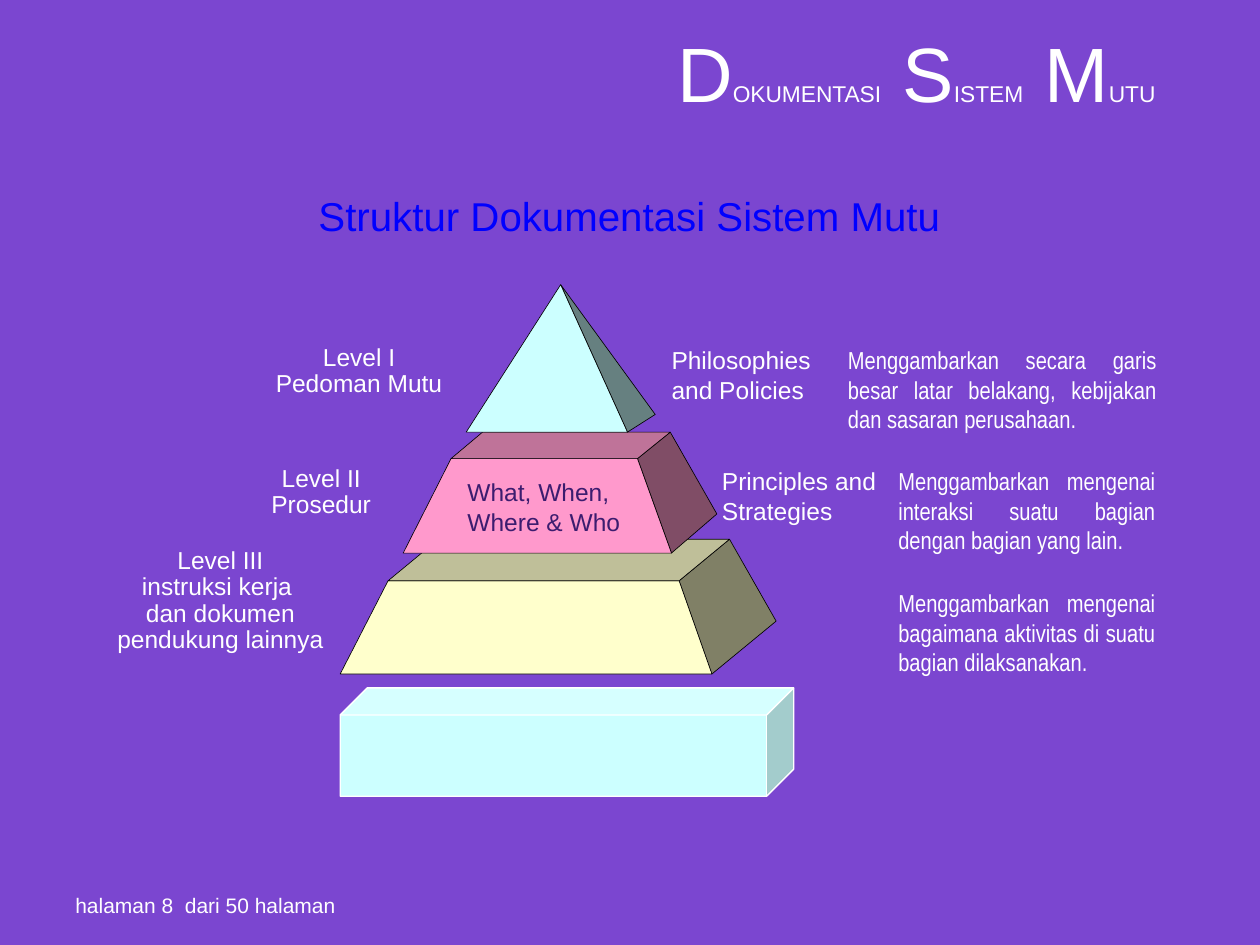
import dataclasses
import pptx
import pptx.dml.color
import pptx.enum.shapes
import pptx.enum.text
import pptx.util

Inches = pptx.util.Inches
Pt = pptx.util.Pt
Align = pptx.enum.text.PP_ALIGN
Anchor = pptx.enum.text.MSO_ANCHOR


@dataclasses.dataclass
class Theme:
    back: str = "7B46D0"
    white: str = "FFFFFF"
    black: str = "000000"
    blue: str = "0000FF"
    dark: str = "3C1C6F"
    cream: str = "FFFFCC"
    pink: str = "FF99CC"
    aqua: str = "CCFFFF"
    font: str = "Arial"
    thin: str = "Arial Narrow"
    cap: int = 44
    small: int = 13
    head: int = 23
    body: int = 14
    foot: int = 12


theme = Theme()


def tint(code, share=1):
    """Return the colour darkened to the given share of its brightness."""
    parts = [int(code[i:i + 2], 16) for i in (0, 2, 4)]
    return pptx.dml.color.RGBColor(*[int(v * share + 0.5) for v in parts])


def write(place, lines, size, color=theme.white, font=theme.font,
          align=Align.LEFT, pad=(0.03, 0.06), space=None, anchor=Anchor.TOP):
    """Add a text box with one paragraph, broken into the given lines."""
    box = page.shapes.add_textbox(*[Inches(v) for v in place])
    frame = box.text_frame
    frame.word_wrap = True
    frame.vertical_anchor = anchor
    frame.margin_left = frame.margin_right = Inches(pad[0])
    frame.margin_top = frame.margin_bottom = Inches(pad[1])
    para = frame.paragraphs[0]
    para.alignment = align
    if space:
        para.line_spacing = space
    for i, line in enumerate(lines):
        if i:
            para.add_line_break()
        run = para.add_run()
        run.text = line
        run.font.name = font
        run.font.size = Pt(size)
        run.font.color.rgb = tint(color)


# Slide and background
deck = pptx.Presentation()
deck.slide_width, deck.slide_height = Inches(10), Inches(7.5)
page = deck.slides.add_slide(deck.slide_layouts[5])
page.background.fill.solid()
page.background.fill.fore_color.rgb = tint(theme.back)

# Title with large initials
title = page.shapes.title
title.left, title.top = Inches(0.8), Inches(0.32)
title.width, title.height = Inches(8.5), Inches(0.5)
frame = title.text_frame
frame.word_wrap = True
frame.auto_size = pptx.enum.text.MSO_AUTO_SIZE.NONE
frame.vertical_anchor = Anchor.MIDDLE
frame.margin_left = frame.margin_right = Inches(0.13)
frame.margin_top = frame.margin_bottom = Inches(0.06)
para = frame.paragraphs[0]
para.alignment = Align.RIGHT
for first, rest in [("D", "OKUMENTASI"), (" S", "ISTEM"), (" M", "UTU")]:
    for text, size in [(first, theme.cap), (rest, theme.small)]:
        run = para.add_run()
        run.text = text
        run.font.name = theme.font
        run.font.size = Pt(size)
        run.font.color.rgb = tint(theme.white)

# Heading and page note
write((0.7, 1.5, 8.6, 0.42), ["Struktur Dokumentasi Sistem Mutu"], theme.head,
      theme.blue, align=Align.CENTER, pad=(0.08, 0.02))
write((0.5, 6.83, 2.33, 0.5), ["halaman 8  dari 50 halaman"], theme.foot,
      pad=(0.1, 0.05), anchor=Anchor.BOTTOM)

# Pyramid tiers, lowest first: front base left and right, front top left
# and right, rear top left and right, rear base right
tip = (4.45, 2.26)
tiers = [
    (theme.cream, (2.7, 5.35), (5.65, 5.35), (3.08, 4.61), (5.39, 4.61),
     (3.48, 4.28), (5.79, 4.28), (6.16, 4.93)),
    (theme.pink, (3.2, 4.39), (5.33, 4.39), (3.58, 3.64), (5.06, 3.64),
     (3.83, 3.43), (5.32, 3.43), (5.69, 4.08)),
    (theme.aqua, (3.7, 3.43), (4.98, 3.43), tip, tip, tip, tip, (5.2, 3.29)),
]
for color, left, right, upleft, upright, backleft, backright, rear in tiers:
    faces = [(0.5, [right, upright, backright, rear]),
             (1, [left, upleft, upright, right])]
    if upleft != upright:
        faces.append((0.75, [upright, backright, backleft, upleft]))
    for share, spots in faces:
        spots = [(Inches(x), Inches(y)) for x, y in spots]
        pen = page.shapes.build_freeform(*spots[0])
        pen.add_line_segments(spots[1:], close=True)
        face = pen.convert_to_shape()
        face.shadow.inherit = False
        face.fill.solid()
        face.fill.fore_color.rgb = tint(color, share)
        face.line.color.rgb = tint(theme.black)
        face.line.width = Pt(0.38)

# Records block
block = page.shapes.add_shape(pptx.enum.shapes.MSO_SHAPE.CUBE, Inches(2.7),
                              Inches(5.46), Inches(3.6), Inches(0.86))
block.adjustments[0] = 0.25
block.shadow.inherit = False
block.fill.solid()
block.fill.fore_color.rgb = tint(theme.aqua)
block.line.color.rgb = tint(theme.white)
block.line.width = Pt(0.75)

# Label on the middle tier
write((3.58, 3.73, 1.6, 0.6), ["What, When,", "Where & Who"], theme.body,
      theme.dark, pad=(0.13, 0.06))

# Level names on the left
for place, lines in [
    ((2.1, 2.68, 1.5, 0.55), ["Level I", "Pedoman Mutu"]),
    ((1.9, 3.64, 1.3, 0.55), ["Level II", "Prosedur"]),
    ((0.7, 4.29, 2.1, 0.98), ["Level III", "instruksi kerja ", "dan dokumen",
                              "pendukung lainnya"]),
]:
    write(place, lines, theme.body, align=Align.CENTER, space=0.9)

# Themes next to the tiers
for place, text in [
    ((5.3, 2.68, 1.2, 0.6), "Philosophies and Policies"),
    ((5.7, 3.64, 1.3, 0.6), "Principles and Strategies"),
]:
    write(place, [text], theme.body)

# Descriptions on the right
for place, text in [
    ((6.6, 2.68, 2.71, 0.84), "Menggambarkan secara garis besar latar "
     "belakang, kebijakan dan sasaran perusahaan."),
    ((7, 3.64, 2.3, 0.84), "Menggambarkan mengenai interaksi suatu bagian "
     "dengan bagian yang lain."),
    ((7, 4.61, 2.3, 0.84), "Menggambarkan mengenai bagaimana aktivitas di "
     "suatu bagian dilaksanakan."),
]:
    write(place, [text], theme.body, font=theme.thin, align=Align.JUSTIFY,
          pad=(0.13, 0.06))

deck.save("out.pptx")
